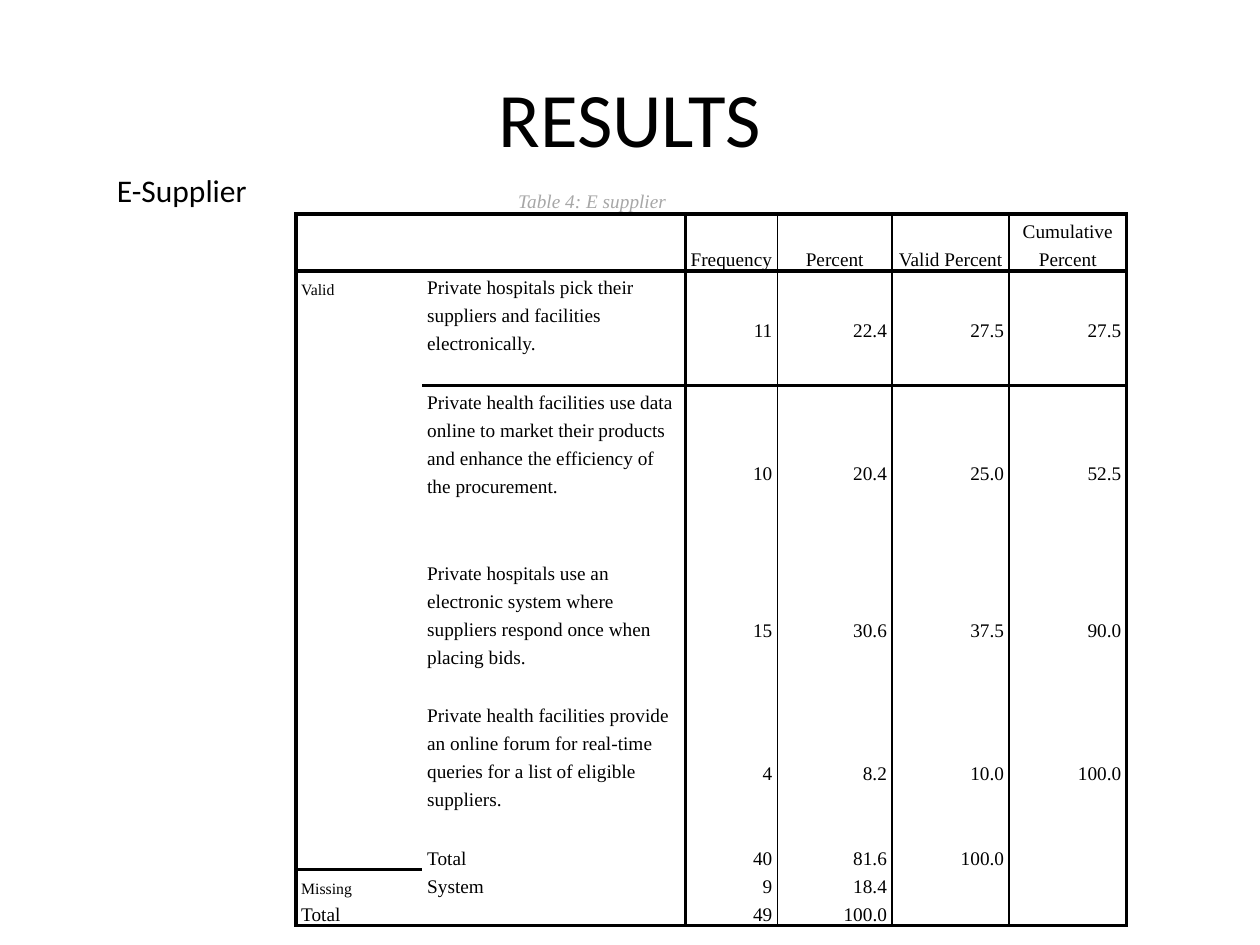
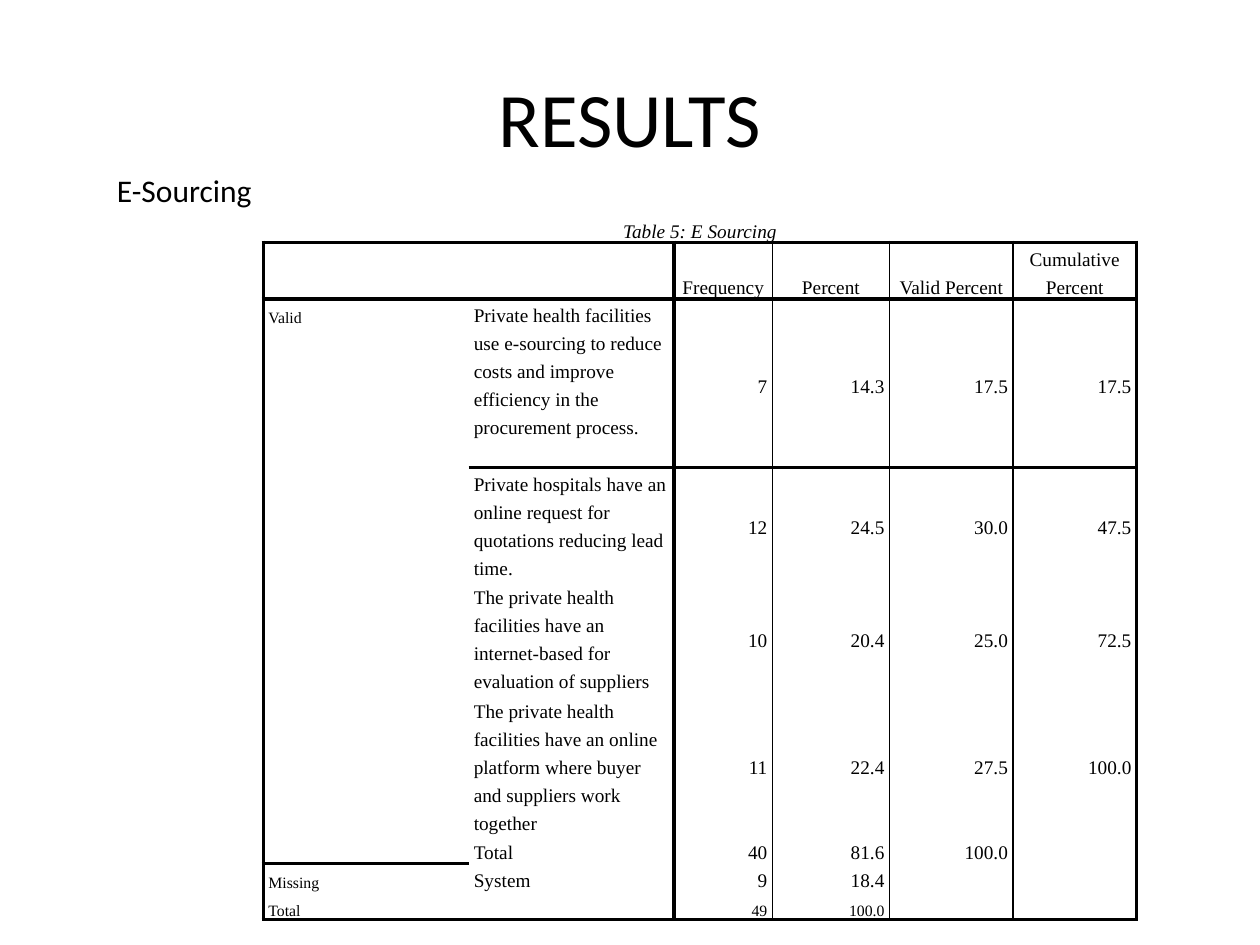
from dataclasses import dataclass

from lxml import etree
from pptx import Presentation
from pptx import util as u
from pptx.dml import color
from pptx.enum import text
from pptx.oxml import ns

ALIGN = text.PP_ALIGN
ANCHOR = text.MSO_ANCHOR


@dataclass(frozen=True)
class Theme:
    """Colours, fonts, type sizes and line widths."""
    ink: str = "000000"
    muted: str = "A7A7A7"
    paper: str = "FFFFFF"
    sans: str = "Calibri"
    serif: str = "Times New Roman"
    title: int = 44
    heading: int = 18
    body: int = 11
    small: int = 9
    leading: int = 16
    heavy: float = 2.25
    thin: float = 1


THEME = Theme()
PLAIN_STYLE = "{2D5ABB26-0587-4C30-8999-92F81FD0307C}"
STUB = 2
HEADERS = ["Frequency", "Percent", "Valid Percent", "Cumulative Percent"]
CLOSING = [
    ["", "Total", "40", "81.6", "100.0", ""],
    ["Missing", "System", "9", "18.4", "", ""],
    ["Total", "", "49", "100.0", "", ""],
]


def write_text(tf, words, font=THEME.serif, size=THEME.body, ink=THEME.ink,
               italic=False, align=ALIGN.LEFT, leading=None, after=None, indent=0):
    """Write one formatted paragraph into a text frame."""
    p = tf.paragraphs[0]
    p.alignment = align
    if leading:
        p.line_spacing = u.Pt(leading)
    if after:
        p.space_after = u.Pt(after)
    if indent:
        props = p._p.get_or_add_pPr()
        for key, value in (("marL", indent), ("marR", indent), ("indent", 0)):
            props.set(key, str(int(value)))
    if not words:
        etree.SubElement(p._p, ns.qn("a:endParaRPr"), sz=str(size * 100))
        return
    r = p.add_run()
    r.text = words
    r.font.name, r.font.size, r.font.italic = font, u.Pt(size), italic
    r.font.color.rgb = color.RGBColor.from_string(ink)


def draw_border(cell, side, width):
    """Draw one side of a table cell."""
    line = etree.SubElement(cell._tc.get_or_add_tcPr(), ns.qn(f"a:ln{side}"),
                            w=str(int(u.Pt(width))))
    fill = etree.SubElement(line, ns.qn("a:solidFill"))
    etree.SubElement(fill, ns.qn("a:srgbClr"), val=THEME.ink)


class Deck:
    """Slides drawn on a grid of 100 columns by 75 rows."""

    def __init__(self):
        self.prs = Presentation()
        self.unit = u.Inches(0.1)
        self.prs.slide_width, self.prs.slide_height = self.grid(100, 75)
        self.s = None

    def grid(self, *steps):
        """Turn grid steps into lengths."""
        return [u.Emu(round(step * self.unit)) for step in steps]

    def new_slide(self, title, heading):
        """Start a slide with its title and heading."""
        self.s = self.prs.slides.add_slide(self.prs.slide_layouts[6])
        self.textbox(title, (5, 3, 90, 12.5), anchor=ANCHOR.MIDDLE,
                     size=THEME.title, align=ALIGN.CENTER)
        self.textbox(heading, (8.3, 13.1, 43.7, 4), size=THEME.heading)

    def textbox(self, words, box, anchor=ANCHOR.TOP, **style):
        """Add a wrapped text box in the sans font."""
        tf = self.s.shapes.add_textbox(*self.grid(*box)).text_frame
        tf.word_wrap = True
        tf.vertical_anchor = anchor
        write_text(tf, words, font=THEME.sans, **style)

    def frequency_table(self, caption, items, at, cols, rows, caption_style,
                        caption_span, split=None, total_size=THEME.body):
        """Add a frequency table; split is a column joined to the one before it."""
        records = [["", ""] + HEADERS, *items, *CLOSING]
        last_row, last_col = len(rows) - 1, len(cols)
        frame = self.s.shapes.add_table(
            len(rows), last_col, *self.grid(*at, sum(cols), sum(rows)))
        table = frame.table
        table.first_row = table.horz_banding = False
        frame._element.find(".//" + ns.qn("a:tableStyleId")).text = PLAIN_STYLE
        for col, width in zip(table.columns, self.grid(*cols)):
            col.width = width
        for row, height in zip(table.rows, self.grid(*rows)):
            row.height = height

        self.merge(table, 0, 0, 0, caption_span - 1)
        if caption_span < last_col:
            self.merge(table, 0, caption_span, 0, last_col - 1)
        for row in (1, last_row):
            self.merge(table, row, 0, row, STUB - 1)
        self.merge(table, 2, 0, last_row - 2, 0)
        if split:
            for row in range(1, last_row + 1):
                self.merge(table, row, split - 1, row, split)

        places = [col for col in range(last_col) if col != split]
        for row in range(last_row + 1):
            for col in range(last_col):
                cell = table.cell(row, col)
                self.rule_cell(cell, row, col, last_row, last_col, split)
                if row == 0:
                    words, style = (caption if col == 0 else ""), caption_style
                    style = {"align": ALIGN.CENTER, **style}
                    cell.vertical_anchor = ANCHOR.MIDDLE
                else:
                    words = records[row - 1][places.index(col)] if col != split else ""
                    style = self.body_style(cell, row, col, last_row, total_size)
                write_text(cell.text_frame, words, **style)

    def merge(self, table, top, left, bottom, right):
        """Merge a block of cells."""
        table.cell(top, left).merge(table.cell(bottom, right))

    def body_style(self, cell, row, col, last_row, total_size):
        """Anchor a cell and give the text format its place calls for."""
        style = {"leading": THEME.leading, "indent": u.Inches(0.04)}
        if row == last_row:
            style["size"] = total_size
        elif col == 0:
            style["size"] = THEME.small
        if row == 1:
            cell.vertical_anchor, style["align"] = ANCHOR.BOTTOM, ALIGN.CENTER
        elif col >= STUB:
            cell.vertical_anchor, style["align"] = ANCHOR.MIDDLE, ALIGN.RIGHT
        return style

    def rule_cell(self, cell, row, col, last_row, last_col, split):
        """Rule the frame, stub and header heavily and the figures thinly."""
        cell.margin_left = cell.margin_right = cell.margin_top = cell.margin_bottom = 0
        if row:
            for side, edge in (("L", col), ("R", col + cell._tc.gridSpan)):
                if edge in (0, STUB, last_col):
                    draw_border(cell, side, THEME.heavy)
                elif edge not in (1, split):
                    draw_border(cell, side, THEME.thin)
        for side, edge in (("T", row), ("B", row + 1)):
            if edge in (1, 2, last_row + 1):
                draw_border(cell, side, THEME.heavy)
        cell.fill.solid()
        cell.fill.fore_color.rgb = color.RGBColor.from_string(THEME.paper)


def main():
    """Build both result slides."""
    deck = Deck()

    deck.new_slide("RESULTS", "E-Supplier")
    deck.frequency_table(
        "Table 4: E supplier",
        [
            ["Valid", "Private hospitals pick their suppliers and facilities "
             "electronically.", "11", "22.4", "27.5", "27.5"],
            ["", "Private health facilities use data online to market their products "
             "and enhance the efficiency of the procurement.",
             "10", "20.4", "25.0", "52.5"],
            ["", "Private hospitals use an electronic system where suppliers respond "
             "once when placing bids.", "15", "30.6", "37.5", "90.0"],
            ["", "Private health facilities provide an online forum for real-time "
             "queries for a list of eligible suppliers.",
             "4", "8.2", "10.0", "100.0"],
        ],
        at=(23.5, 15.1),
        cols=[10, 20.9, 7.3, 8.8, 0.3, 9.3, 9.3],
        rows=[1.9, 4.5, 9.1, 13.6, 11.3, 11.3] + [2.2] * 3,
        caption_style={"ink": THEME.muted, "italic": True, "after": 10},
        caption_span=4,
        split=4,
    )

    deck.new_slide("RESULTS", "E-Sourcing")
    deck.frequency_table(
        "Table 5: E Sourcing",
        [
            ["Valid", "Private health facilities use e-sourcing to reduce costs and "
             "improve efficiency in the procurement process.",
             "7", "14.3", "17.5", "17.5"],
            ["", "Private hospitals have an online request for quotations reducing "
             "lead time.", "12", "24.5", "30.0", "47.5"],
            ["", "The private health facilities have an internet-based for evaluation "
             "of suppliers", "10", "20.4", "25.0", "72.5"],
            ["", "The private health facilities have an online platform where buyer "
             "and suppliers work together", "11", "22.4", "27.5", "100.0"],
        ],
        at=(20.9, 17),
        cols=[16.3, 16.3, 7.8, 9.3, 9.8, 9.8],
        rows=[2.2, 4.5, 13.4, 9, 9, 11.2] + [2.2] * 3,
        caption_style={"italic": True, "leading": THEME.leading,
                       "indent": u.Inches(0.04)},
        caption_span=6,
        total_size=THEME.small,
    )
    deck.prs.save("out.pptx")


if __name__ == "__main__":
    main()
